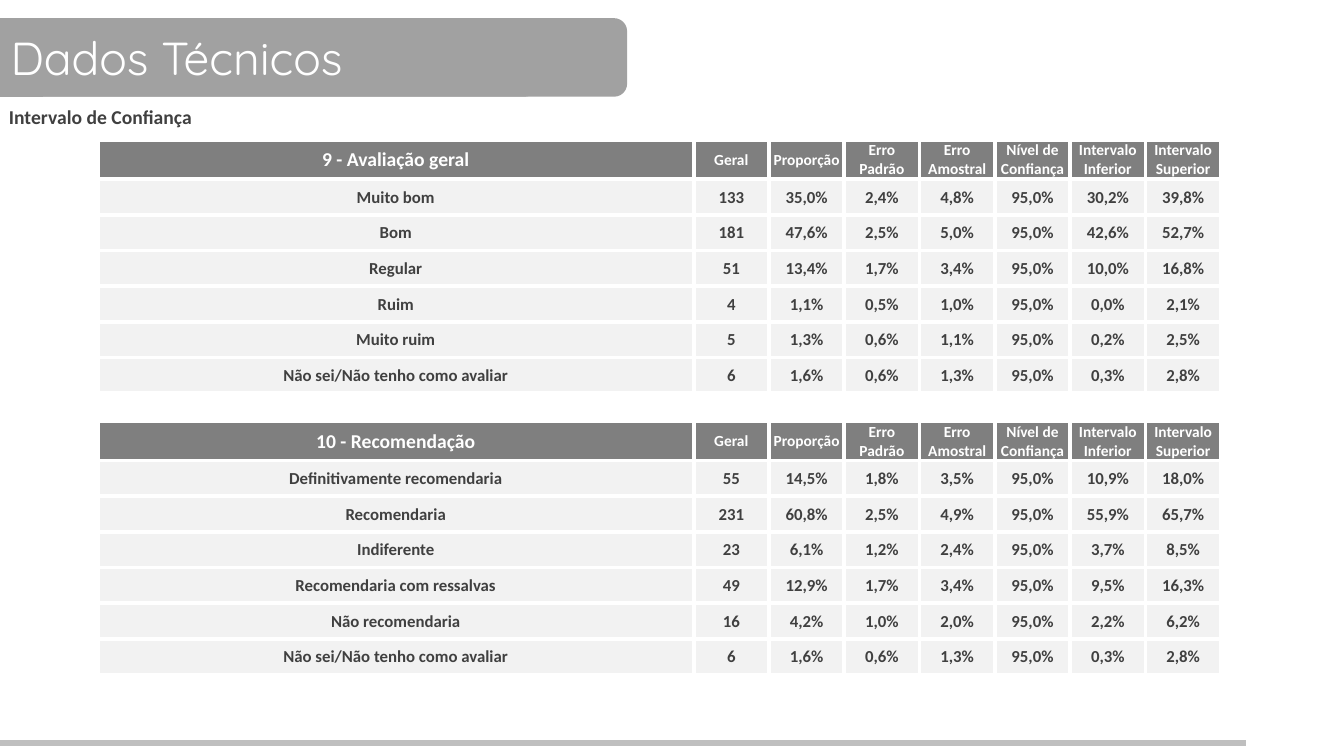
"""Build the slide of confidence intervals for two survey questions."""
import dataclasses

import lxml.etree
import pptx
import pptx.dml.color
import pptx.enum.shapes
import pptx.enum.text
import pptx.oxml.ns
import pptx.slide
import pptx.table
import pptx.text.text
import pptx.util

Inches = pptx.util.Inches
qn = pptx.oxml.ns.qn


@dataclasses.dataclass(frozen=True)
class Theme:
    white: str = "FFFFFF"
    dark: str = "404040"
    head: str = "7F7F7F"
    pale: str = "F2F2F2"
    banner: str = "A1A1A1"
    rule: str = "BFBFBF"
    body: str = "Calibri"
    title: str = "Quicksand"
    big: int = 33
    mid: int = 14
    small: int = 12
    tiny: int = 11


@dataclasses.dataclass(frozen=True)
class Style:
    size: int
    color: str
    font: str = "Calibri"
    bold: bool = True


@dataclasses.dataclass(frozen=True)
class Box:
    left: float
    top: float
    width: float
    height: float

    def place(self) -> tuple[int, ...]:
        return tuple(Inches(n) for n in dataclasses.astuple(self))


@dataclasses.dataclass(frozen=True)
class Row:
    label: str
    values: str


@dataclasses.dataclass(frozen=True)
class Topic:
    name: str
    rows: tuple[Row, ...]


THEME = Theme()
FRAME = Box(0.97, 1.39, 11.14, 5.25)
LABEL, HEAD, GAP = 5.91, 0.36, 0.28
HEADS = ("Geral", "Proporção", "Erro Padrão", "Erro Amostral",
         "Nível de Confiança", "Intervalo Inferior", "Intervalo Superior")
TOPICS = (
    Topic("9 - Avaliação geral", (
        Row("Muito bom", "133 35,0% 2,4% 4,8% 95,0% 30,2% 39,8%"),
        Row("Bom", "181 47,6% 2,5% 5,0% 95,0% 42,6% 52,7%"),
        Row("Regular", "51 13,4% 1,7% 3,4% 95,0% 10,0% 16,8%"),
        Row("Ruim", "4 1,1% 0,5% 1,0% 95,0% 0,0% 2,1%"),
        Row("Muito ruim", "5 1,3% 0,6% 1,1% 95,0% 0,2% 2,5%"),
        Row("Não sei/Não tenho como avaliar", "6 1,6% 0,6% 1,3% 95,0% 0,3% 2,8%"),
    )),
    Topic("10 - Recomendação", (
        Row("Definitivamente recomendaria", "55 14,5% 1,8% 3,5% 95,0% 10,9% 18,0%"),
        Row("Recomendaria", "231 60,8% 2,5% 4,9% 95,0% 55,9% 65,7%"),
        Row("Indiferente", "23 6,1% 1,2% 2,4% 95,0% 3,7% 8,5%"),
        Row("Recomendaria com ressalvas", "49 12,9% 1,7% 3,4% 95,0% 9,5% 16,3%"),
        Row("Não recomendaria", "16 4,2% 1,0% 2,0% 95,0% 2,2% 6,2%"),
        Row("Não sei/Não tenho como avaliar", "6 1,6% 0,6% 1,3% 95,0% 0,3% 2,8%"),
    )),
)


def tint(code: str) -> pptx.dml.color.RGBColor:
    return pptx.dml.color.RGBColor.from_string(code)


def write(frame: pptx.text.text.TextFrame, text: str, style: Style,
          align: pptx.enum.text.PP_ALIGN = pptx.enum.text.PP_ALIGN.LEFT) -> None:
    para = frame.paragraphs[0]
    para.alignment = align
    run = para.add_run()
    run.text = text
    run.font.name = style.font
    run.font.size = pptx.util.Pt(style.size)
    run.font.bold = style.bold
    run.font.color.rgb = tint(style.color)


def banner(slide: pptx.slide.Slide, box: Box) -> pptx.text.text.TextFrame:
    shape = slide.shapes.add_shape(
        pptx.enum.shapes.MSO_SHAPE.ROUNDED_RECTANGLE, *box.place())
    shape.shadow.inherit = False
    shape.fill.solid()
    shape.fill.fore_color.rgb = tint(THEME.banner)
    shape.line.fill.background()
    shape.text_frame.vertical_anchor = pptx.enum.text.MSO_ANCHOR.MIDDLE
    return shape.text_frame


def footer(slide: pptx.slide.Slide) -> None:
    line = slide.shapes.add_connector(
        pptx.enum.shapes.MSO_CONNECTOR.STRAIGHT,
        Inches(0), Inches(7.37), Inches(12.36), Inches(7.37))
    line.line.color.rgb = tint(THEME.rule)
    line.line.width = pptx.util.Pt(4.5)
    lxml.etree.SubElement(line._element.spPr, qn("a:effectLst"))


def border(cell: pptx.table._Cell) -> None:
    props = cell._tc.get_or_add_tcPr()
    for side in ("L", "R", "T", "B"):
        edge = lxml.etree.SubElement(
            props, qn(f"a:ln{side}"), w=str(pptx.util.Pt(3)))
        fill = lxml.etree.SubElement(edge, qn("a:solidFill"))
        lxml.etree.SubElement(fill, qn("a:srgbClr"), val=THEME.white)


def paint(cell: pptx.table._Cell, text: str, style: Style, fill: str) -> None:
    cell.margin_left = cell.margin_right = cell.margin_top = Inches(0.01)
    cell.margin_bottom = Inches(0)
    cell.vertical_anchor = pptx.enum.text.MSO_ANCHOR.MIDDLE
    border(cell)
    cell.fill.solid()
    cell.fill.fore_color.rgb = tint(fill)
    write(cell.text_frame, text, style, pptx.enum.text.PP_ALIGN.CENTER)


def clear(cell: pptx.table._Cell) -> None:
    cell.margin_top = cell.margin_bottom = Inches(0)
    border(cell)
    cell.fill.background()
    lxml.etree.SubElement(cell.text_frame.paragraphs[0]._p,
                          qn("a:endParaRPr"), sz=str(THEME.tiny * 100))


def grid(slide: pptx.slide.Slide) -> None:
    block = len(TOPICS[0].rows) + 1
    count = block * len(TOPICS) + len(TOPICS) - 1
    table = slide.shapes.add_table(
        count, len(HEADS) + 1, *FRAME.place()).table
    table.first_row = table.horz_banding = False
    for num, col in enumerate(table.columns):
        col.width = Inches((FRAME.width - LABEL) / len(HEADS) if num else LABEL)
    lines = sum(len(topic.rows) for topic in TOPICS)
    free = FRAME.height - HEAD * len(TOPICS) - GAP * (len(TOPICS) - 1)
    for row in table.rows:
        row.height = Inches(free / lines)
    name = Style(THEME.mid, THEME.white)
    head = Style(THEME.tiny, THEME.white)
    body = Style(THEME.small, THEME.dark)
    for num, topic in enumerate(TOPICS):
        top = num * (block + 1)
        table.rows[top].height = Inches(HEAD)
        for col, text in enumerate((topic.name, *HEADS)):
            paint(table.cell(top, col), text, head if col else name, THEME.head)
        for line, row in enumerate(topic.rows, top + 1):
            for col, text in enumerate((row.label, *row.values.split())):
                paint(table.cell(line, col), text, body, THEME.pale)
        if num:
            table.rows[top - 1].height = Inches(GAP)
            for cell in table.rows[top - 1].cells:
                clear(cell)


def main() -> None:
    deck = pptx.Presentation()
    deck.slide_width, deck.slide_height = Inches(13.33), Inches(7.5)
    slide = deck.slides.add_slide(deck.slide_layouts[6])
    banner(slide, Box(-0.27, 0.18, 6.49, 0.78))
    footer(slide)
    grid(slide)
    title = banner(slide, Box(-0.03, 0.18, 5.36, 0.78))
    write(title, "Dados Técnicos",
          Style(THEME.big, THEME.white, THEME.title, False))
    note = slide.shapes.add_textbox(*Box(-0.01, 0.99, 2.03, 0.34).place())
    note.text_frame.word_wrap = False
    note.text_frame.auto_size = pptx.enum.text.MSO_AUTO_SIZE.SHAPE_TO_FIT_TEXT
    write(note.text_frame, "Intervalo de Confiança",
          Style(THEME.mid, THEME.dark, THEME.body))
    deck.save("out.pptx")


if __name__ == "__main__":
    main()
